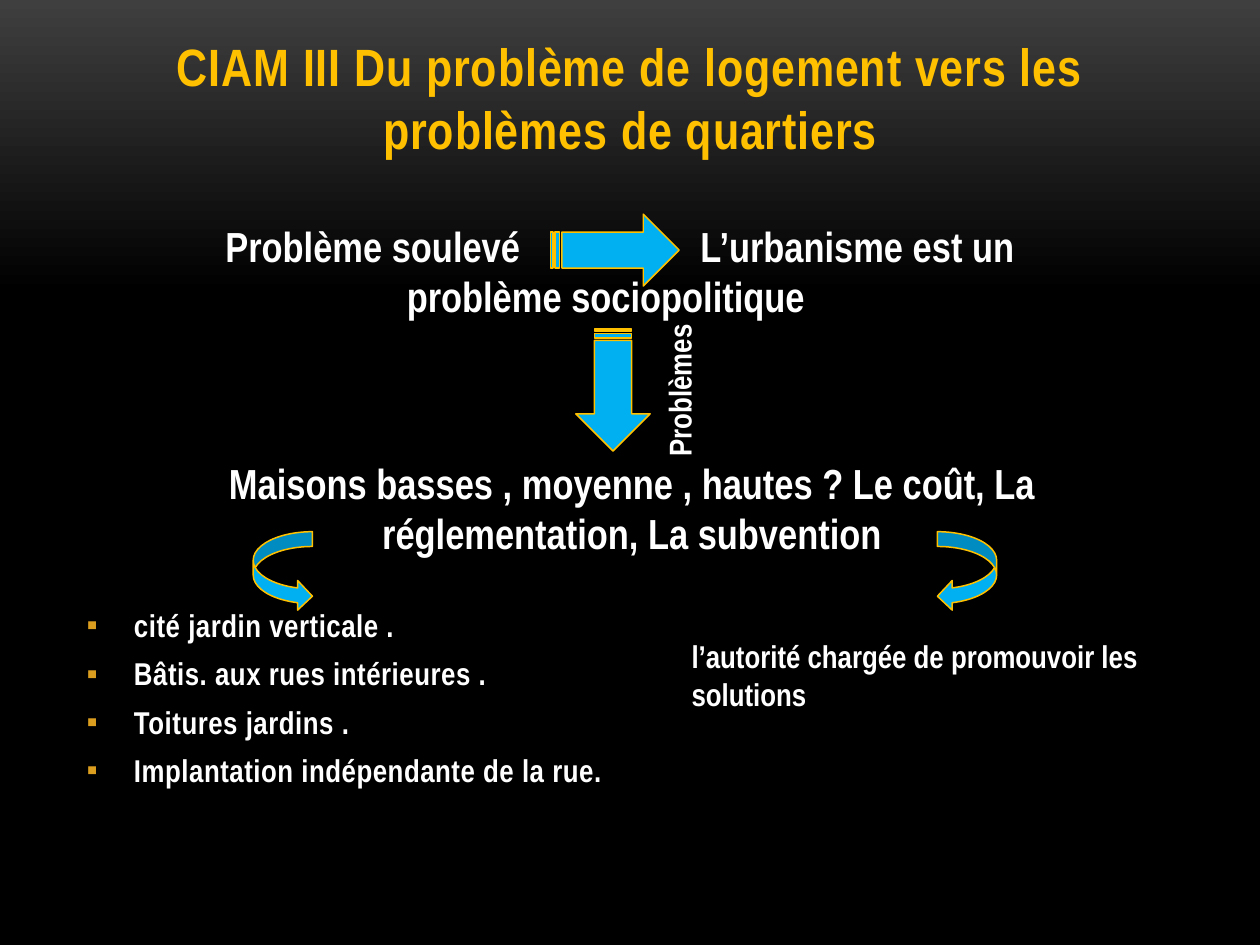
from pptx import Presentation, util as u
from pptx.dml.color import RGBColor
from pptx.enum import shapes, text
from pptx.oxml.ns import qn
from lxml import etree

COLS, ROWS = 100, 75
W, H = u.Inches(10), u.Inches(7.5)
FONT = "Arial Narrow"
WHITE = RGBColor(0xFF, 0xFF, 0xFF)
BLACK = RGBColor(0, 0, 0)
GREY = RGBColor(0x3F, 0x3F, 0x3F)
GOLD = RGBColor(0xFF, 0xC0, 0x00)
BLUE = RGBColor(0x00, 0xB0, 0xF0)
BULLET = "DC9E1F"
ARROW = shapes.MSO_SHAPE


def x(cols):
    return int(W * cols / COLS)


def y(rows):
    return int(H * rows / ROWS)


def inside(box, left, top, width, height):
    """Slide lengths of a part placed in grid units from the box corner."""
    return x(box[0] + left), y(box[1] + top), x(width), y(height)


def set_indent(p, left, first):
    pPr = p._p.get_or_add_pPr()
    pPr.set("marL", str(left))
    pPr.set("indent", str(first))
    return pPr


def set_bullet(p, indent):
    pPr = set_indent(p, indent, -indent)
    colour = etree.SubElement(pPr, qn("a:buClr"))
    etree.SubElement(colour, qn("a:srgbClr"), val=BULLET)
    etree.SubElement(pPr, qn("a:buFont"), typeface="Arial")
    etree.SubElement(pPr, qn("a:buChar"), char="▪")


def write(p, words, size, color=WHITE, align=text.PP_ALIGN.LEFT, spacing=0):
    p.alignment = align
    r = p.add_run()
    r.text = words
    r.font.name, r.font.size, r.font.bold = FONT, u.Pt(size), True
    r.font.color.rgb = color
    if spacing:
        r._r.get_or_add_rPr().set("spc", str(int(spacing * 100)))


def add_box(s, place, wrap=True):
    sp = s.shapes.add_textbox(*place)
    sp.text_frame.word_wrap = wrap
    return sp


def add_arrow(s, kind, place, rotation=0):
    sp = s.shapes.add_shape(kind, *place)
    sp.shadow.inherit = False
    sp.rotation = rotation
    sp.fill.solid()
    sp.fill.fore_color.rgb = BLUE
    sp.line.color.rgb = GOLD
    sp.line.width = u.Pt(0.85)


def set_background(s):
    fill = s.background.fill
    fill.gradient()
    fill.gradient_angle = 270
    for stop, color, position in zip(fill.gradient_stops, (GREY, BLACK), (0, 0.31)):
        stop.color.rgb = color
        stop.position = position


def put_title(s, box):
    sp = s.shapes.title
    sp.left, sp.top, sp.width, sp.height = inside(box, 0, 0, *box[2:])
    tf = sp.text_frame
    tf.word_wrap = True
    tf.auto_size = text.MSO_AUTO_SIZE.NONE
    tf.vertical_anchor = text.MSO_ANCHOR.BOTTOM
    write(tf.paragraphs[0],
          "CIAM III Du problème de logement vers les problèmes de quartiers",
          30, GOLD, text.PP_ALIGN.CENTER, spacing=0.5)


def put_question(s, box):
    """Raised problem, an arrow, and the answer that runs on below the arrow."""
    tf = add_box(s, inside(box, 3.9, 0, 26.5, 5)).text_frame
    write(tf.paragraphs[0], "Problème soulevé", 24)
    tf = add_box(s, inside(box, 18.3, 0, 54.1, box[3])).text_frame
    p = tf.paragraphs[0]
    set_indent(p, 0, x(23.3))
    write(p, "L’urbanisme est un problème sociopolitique", 24)
    add_arrow(s, ARROW.STRIPED_RIGHT_ARROW, inside(box, 30.7, 0, 10.2, 5.7))


def put_descent(s, box):
    """Downward arrow with its upright label."""
    add_arrow(s, ARROW.STRIPED_RIGHT_ARROW, inside(box, 0.8, 3, 9.7, 5.9), 90)
    sp = add_box(s, inside(box, 4.6, 3.9, 12.6, 4), wrap=False)
    sp.rotation = 270
    write(sp.text_frame.paragraphs[0], "Problèmes", 18)


def put_issues(s, box):
    """Issues, with a curved arrow below each end."""
    tf = add_box(s, inside(box, 0, 0, box[2], 9.1)).text_frame
    write(tf.paragraphs[0], "Maisons basses , moyenne , hautes ? Le coût, La "
          "réglementation, La subvention", 24, align=text.PP_ALIGN.CENTER)
    for kind, left in ((ARROW.CURVED_RIGHT_ARROW, 10.7),
                       (ARROW.CURVED_LEFT_ARROW, 65)):
        add_arrow(s, kind, inside(box, left, 6.4, 4.7, 6.3))


def put_solutions(s, box):
    tf = add_box(s, inside(box, 0, 0, 46, box[3])).text_frame
    solutions = ("cité jardin verticale .", "Bâtis. aux rues intérieures .",
                 "Toitures jardins .", "Implantation indépendante de la rue.")
    for i, words in enumerate(solutions):
        p = tf.add_paragraph() if i else tf.paragraphs[0]
        set_bullet(p, x(3.75))
        p.space_after = u.Pt(6)
        write(p, words, 18, spacing=0.3)
    tf = add_box(s, inside(box, 48, 2.5, 43.3, 7.1)).text_frame
    write(tf.paragraphs[0], "l’autorité chargée de promouvoir les solutions", 18)


def main():
    prs = Presentation()
    prs.slide_width, prs.slide_height = W, H
    s = prs.slides.add_slide(prs.slide_layouts[5])
    set_background(s)
    put_title(s, (6.7, 2.9, 86.7, 10.3))
    put_question(s, (13, 17, 72.4, 9.1))
    put_descent(s, (43, 25, 18, 10))
    put_issues(s, (9.4, 35.8, 81.5, 12.7))
    put_solutions(s, (5.9, 47.6, 91.3, 15.7))
    prs.save("out.pptx")


if __name__ == "__main__":
    main()
